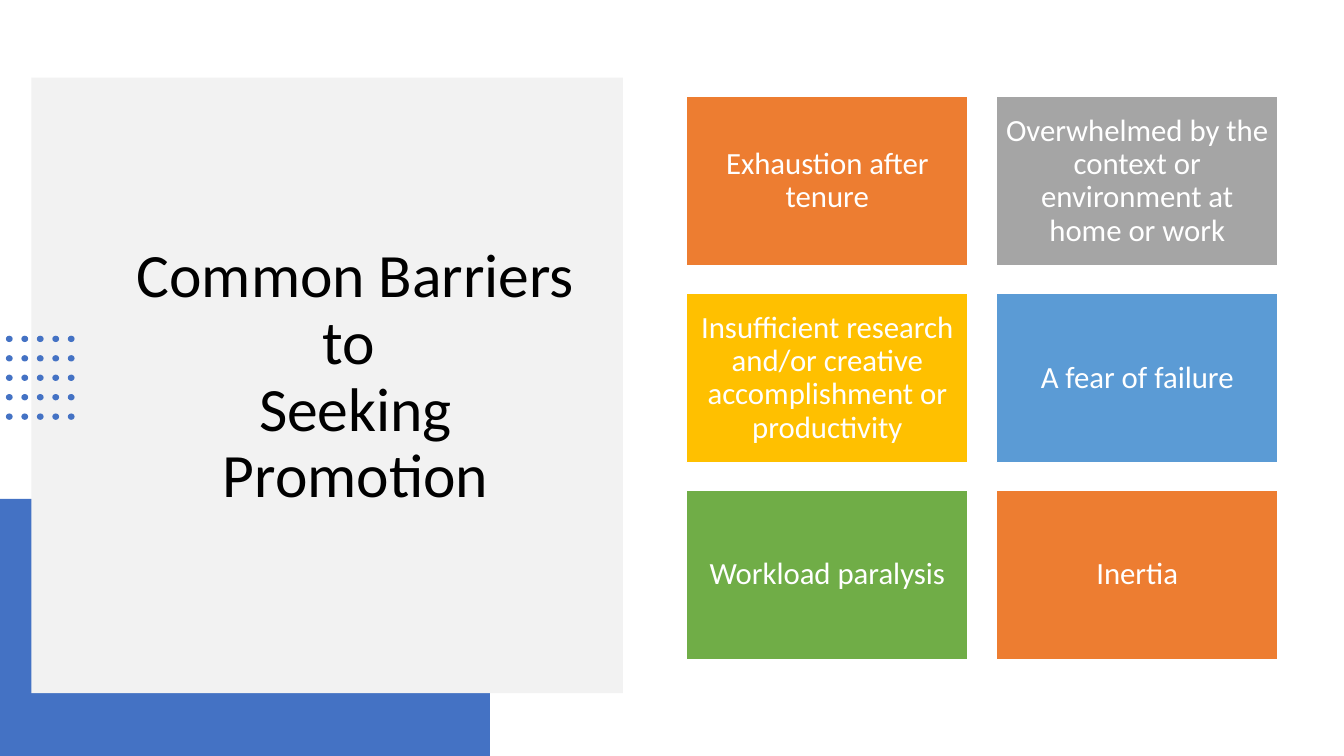
from itertools import product

from pptx import Presentation
from pptx.dml.color import RGBColor
from pptx.enum.shapes import MSO_SHAPE
from pptx.enum.text import MSO_ANCHOR, MSO_AUTO_SIZE, PP_ALIGN
from pptx.util import Cm, Pt

RECT, OVAL = MSO_SHAPE.RECTANGLE, MSO_SHAPE.OVAL
CENTER, MIDDLE = PP_ALIGN.CENTER, MSO_ANCHOR.MIDDLE
NO_AUTOFIT = MSO_AUTO_SIZE.NONE
TITLE_ONLY = 5

FONT = "Calibri"
BLUE, PANEL, WHITE, BLACK = "4472C4", "F2F2F2", "FFFFFF", "000000"

TITLE = "Common Barriers to \vSeeking Promotion"
BARRIERS = [
    ("Exhaustion after tenure", "ED7D31"),
    ("Overwhelmed by the context or environment at home or work", "A5A5A5"),
    ("Insufficient research and/or creative accomplishment or productivity",
     "FFC000"),
    ("A fear of failure", "5B9BD5"),
    ("Workload paralysis", "70AD47"),
    ("Inertia", "ED7D31"),
]


def rgb(color):
    return RGBColor.from_string(color)


def add_box(shapes, kind, left, top, width, height, fill, line=None):
    sp = shapes.add_shape(kind, Cm(left), Cm(top), Cm(width), Cm(height))
    sp.shadow.inherit = False
    sp.fill.solid()
    sp.fill.fore_color.rgb = rgb(fill)
    if line:
        sp.line.color.rgb = rgb(line)
        sp.line.width = Pt(1)
    else:
        sp.line.fill.background()
    return sp


def set_text(sp, text, size, color, inset_x=0.25, inset_y=0.13):
    tf = sp.text_frame
    tf.word_wrap = True
    tf.auto_size = NO_AUTOFIT
    tf.vertical_anchor = MIDDLE
    tf.margin_left = tf.margin_right = Cm(inset_x)
    tf.margin_top = tf.margin_bottom = Cm(inset_y)
    tf.text = text
    p = tf.paragraphs[0]
    p.alignment = CENTER
    p.line_spacing = 0.9
    for r in p.runs:
        r.font.name = FONT
        r.font.size = Pt(size)
        r.font.color.rgb = rgb(color)


def place_title(slide):
    """Move the title placeholder above the panel and fill it."""
    title = slide.shapes.title
    title.left, title.top = Cm(2.82), Cm(3.73)
    title.width, title.height = Cm(12.29), Cm(11.58)
    set_text(title, TITLE, 44, BLACK)
    slide.shapes.element.append(title.element)


def add_dot_grid(slide):
    group = slide.shapes.add_group_shape()
    for col, row in product(range(5), repeat=2):
        add_box(group.shapes, OVAL, 0.15 + 0.39 * col, 8.46 + 0.49 * row,
                0.17, 0.16, BLUE)


def add_cards(slide):
    group = slide.shapes.add_group_shape()
    for i, (text, fill) in enumerate(BARRIERS):
        row, col = divmod(i, 2)
        card = add_box(group.shapes, RECT, 17.3 + 7.81 * col,
                       2.44 + 4.96 * row, 7.1, 4.26, fill, line=WHITE)
        set_text(card, text, 22, WHITE, inset_x=0.23, inset_y=0.23)


def main():
    prs = Presentation()
    prs.slide_width, prs.slide_height = Cm(33.87), Cm(19.05)
    slide = prs.slides.add_slide(prs.slide_layouts[TITLE_ONLY])
    add_box(slide.shapes, RECT, 0, 12.57, 12.35, 6.48, BLUE)
    add_box(slide.shapes, RECT, 0.79, 1.96, 14.91, 15.51, PANEL)
    place_title(slide)
    add_dot_grid(slide)
    add_cards(slide)
    prs.save("out.pptx")


if __name__ == "__main__":
    main()
